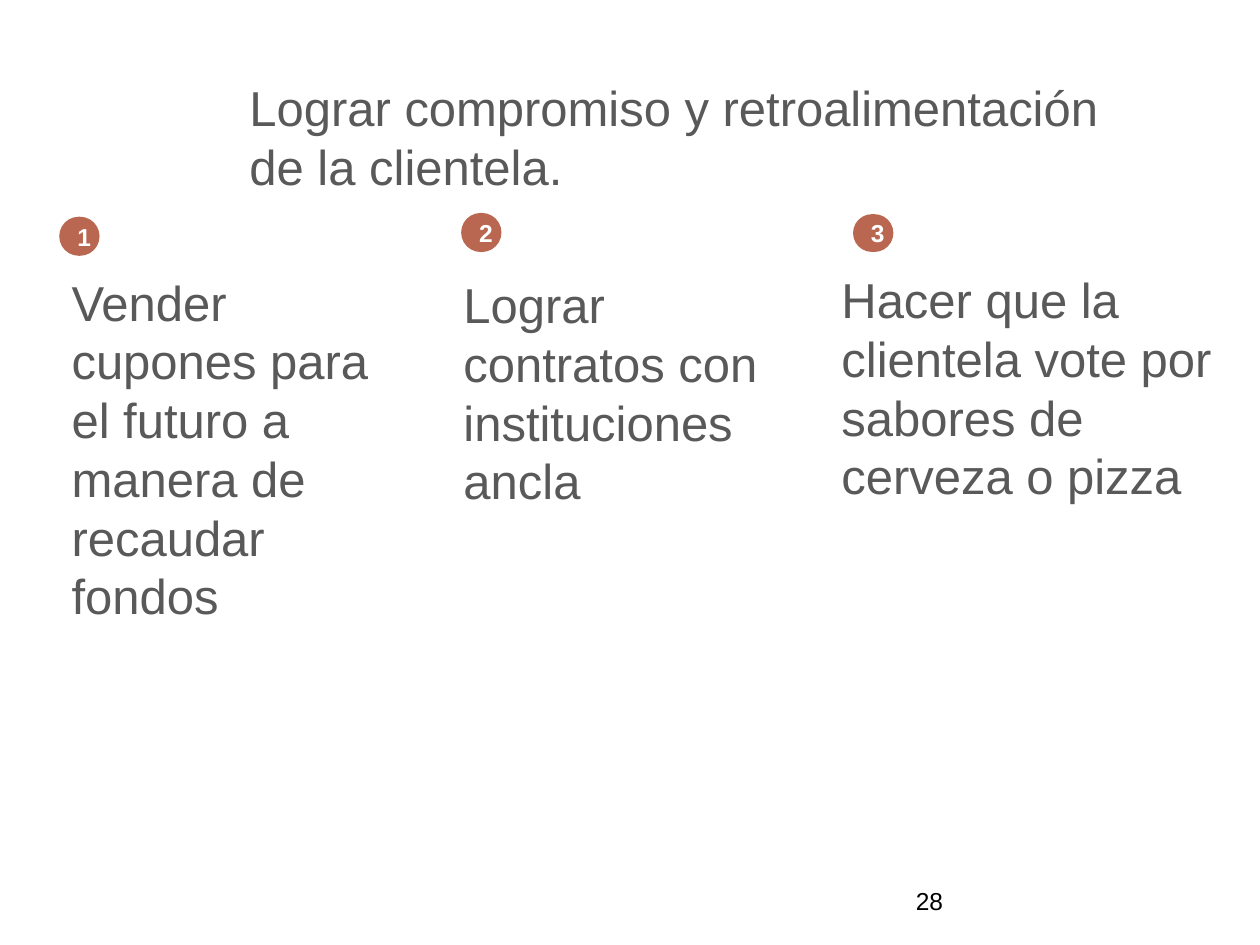
from pptx import Presentation
from pptx.dml.color import RGBColor
from pptx.enum.shapes import MSO_SHAPE as Shape
from pptx.enum.text import MSO_ANCHOR as Anchor, PP_ALIGN as Align
from pptx.util import Pt

COLORS = {"text": "595959", "badge": "B96750", "white": "FFFFFF", "black": "000000"}
FONT = "Arial"
LINE_HEIGHT = 33.6

# Each idea: number, badge box, text, text box (left, top, width, height)
IDEAS = [
    ("1", (33.84, 123.84, 23.04, 22.32),
     "Vender cupones para el futuro a manera de recaudar fondos",
     (33.84, 150.48, 203.76, 108.72)),
    ("2", (263.52, 121.68, 23.04, 22.32),
     "Lograr contratos con instituciones ancla",
     (257.76, 151.92, 190.8, 108.72)),
    ("3", (487.44, 122.4, 23.04, 21.6),
     "Hacer que la clientela vote por sabores de cerveza o pizza",
     (473.76, 149.04, 240.48, 108.72)),
]


def write(shape, text, size, color, bold=False, anchor=Anchor.TOP,
          align=Align.LEFT, insets=(7.2, 3.6), spacing=None):
    frame = shape.text_frame
    frame.word_wrap = True
    frame.vertical_anchor = anchor
    frame.margin_left = frame.margin_right = Pt(insets[0])
    frame.margin_top = frame.margin_bottom = Pt(insets[1])
    para = frame.paragraphs[0]
    para.text = text
    para.alignment = align
    if spacing:
        para.line_spacing = Pt(spacing)
    para.font.name = FONT
    para.font.size = Pt(size)
    para.font.bold = bold
    para.font.color.rgb = RGBColor.from_string(COLORS[color])


def add_text(page, box, text, size, color, **style):
    shape = page.shapes.add_textbox(*map(Pt, box))
    write(shape, text, size, color, **style)


def add_badge(page, box, number):
    badge = page.shapes.add_shape(Shape.ROUNDED_RECTANGLE, *map(Pt, box))
    badge.adjustments[0] = 0.5
    badge.shadow.inherit = False
    badge.fill.solid()
    badge.fill.fore_color.rgb = RGBColor.from_string(COLORS["badge"])
    badge.line.fill.background()
    write(badge, number, 14, "white", bold=True, anchor=Anchor.MIDDLE,
          align=Align.CENTER)


def add_idea(page, number, badge_box, text, text_box):
    add_text(page, text_box, text, 28, "text", insets=(7.2, 5), spacing=LINE_HEIGHT)
    add_badge(page, badge_box, number)


def main():
    deck = Presentation()
    deck.slide_width, deck.slide_height = Pt(720), Pt(540)
    page = deck.slides.add_slide(deck.slide_layouts[6])

    # Title
    add_text(page, (128.16, 36, 547.92, 48.24),
             "Lograr compromiso y retroalimentación de la clientela.",
             28, "text", insets=(14.4, 8.6), spacing=LINE_HEIGHT)

    # Three numbered ideas
    for idea in IDEAS:
        add_idea(page, *idea)

    # Page number
    add_text(page, (516.24, 500.4, 167.76, 28.8), "28", 14, "black",
             anchor=Anchor.MIDDLE)

    deck.save("out.pptx")


if __name__ == "__main__":
    main()
